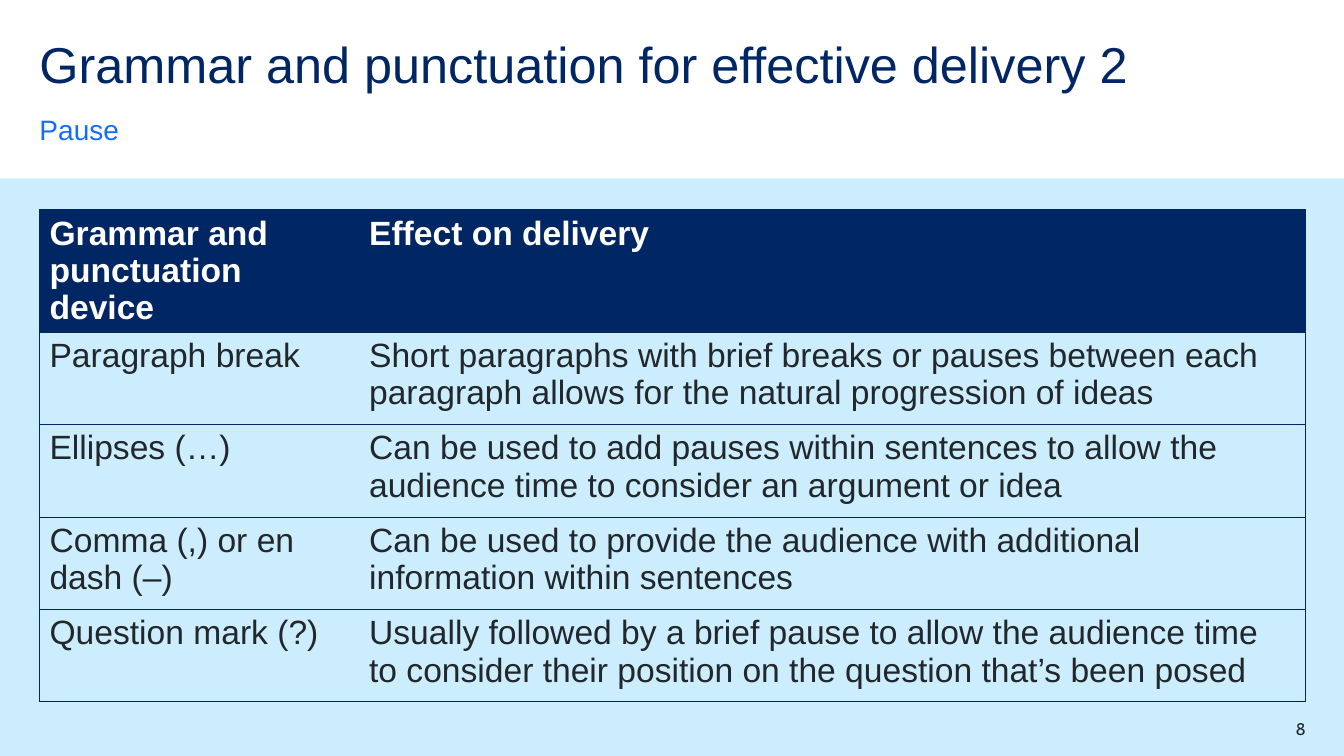
from dataclasses import dataclass

import pptx
import pptx.dml.color
import pptx.enum.shapes
import pptx.enum.text
import pptx.oxml.ns
import pptx.util
from lxml import etree

Pt = pptx.util.Pt
RGBColor = pptx.dml.color.RGBColor
PP_ALIGN = pptx.enum.text.PP_ALIGN
MSO_ANCHOR = pptx.enum.text.MSO_ANCHOR

NAVY = RGBColor(0x00, 0x26, 0x64)
BLUE = RGBColor(0x14, 0x6C, 0xFD)
PALE_BLUE = RGBColor(0xCB, 0xED, 0xFD)
CHARCOAL = RGBColor(0x22, 0x27, 0x2B)
WHITE = RGBColor(0xFF, 0xFF, 0xFF)

SLIDE_WIDTH, SLIDE_HEIGHT = 960, 540
BAND_TOP = 127.5
LEFT = 28.2
COLUMN_WIDTHS = (228.3, 676)
ROW_HEIGHT = 66
BORDER_WIDTH = 0.5


@dataclass(frozen=True)
class TextBlock:
    text: str
    box: tuple[float, float, float, float]
    size: float
    color: RGBColor
    font: str = "Arial"
    align: PP_ALIGN = PP_ALIGN.LEFT
    anchor: MSO_ANCHOR = MSO_ANCHOR.TOP
    line_spacing: float = 1.0
    space_after: float = 0


@dataclass(frozen=True)
class Device:
    name: str
    effect: str


HEADING = TextBlock("Grammar and punctuation for effective delivery 2",
                    (LEFT, 28.2, 808, 41), 36, NAVY, line_spacing=0.9)
TOPIC = TextBlock("Pause", (LEFT, 80, 793.5, 24.5), 20, BLUE,
                  anchor=MSO_ANCHOR.BOTTOM, line_spacing=1.5, space_after=12)
PAGE_NUMBER = TextBlock("8", (876.2, 513.4, 56.6, 14.4), 12, CHARCOAL,
                        font="Cabin", align=PP_ALIGN.RIGHT)

DEVICES = (
    Device("Grammar and punctuation device", "Effect on delivery"),
    Device("Paragraph break",
           "Short paragraphs with brief breaks or pauses between each "
           "paragraph allows for the natural progression of ideas"),
    Device("Ellipses (…)",
           "Can be used to add pauses within sentences to allow the "
           "audience time to consider an argument or idea"),
    Device("Comma (,) or en dash (–)",
           "Can be used to provide the audience with additional "
           "information within sentences"),
    Device("Question mark (?)",
           "Usually followed by a brief pause to allow the audience time "
           "to consider their position on the question that’s been posed"),
)


def style_font(font, name: str, size: float, color: RGBColor,
               bold: bool = False) -> None:
    font.name, font.size, font.bold = name, Pt(size), bold
    font.color.rgb = color


def write_block(shape, block: TextBlock) -> None:
    shape.left, shape.top, shape.width, shape.height = map(Pt, block.box)
    frame = shape.text_frame
    frame.text = block.text
    frame.word_wrap = True
    frame.auto_size = pptx.enum.text.MSO_AUTO_SIZE.NONE
    frame.vertical_anchor = block.anchor
    frame.margin_left = frame.margin_right = 0
    frame.margin_top = frame.margin_bottom = 0
    paragraph = frame.paragraphs[0]
    paragraph.alignment = block.align
    paragraph.line_spacing = block.line_spacing
    paragraph.space_before = Pt(0)
    paragraph.space_after = Pt(block.space_after)
    style_font(paragraph.runs[0].font, block.font, block.size, block.color)


def remove_bullet(paragraph) -> None:
    properties = paragraph._p.get_or_add_pPr()
    properties.set("marL", "0")
    properties.set("indent", "0")
    etree.SubElement(properties, pptx.oxml.ns.qn("a:buNone"))


def set_borders(cell, visible_sides: str) -> None:
    """Draw the named sides (L, R, T, B) in navy and hide the others."""
    qn = pptx.oxml.ns.qn
    properties = cell._tc.get_or_add_tcPr()
    for position, side in enumerate("LRTB"):
        line = etree.Element(qn(f"a:ln{side}"), w=str(int(Pt(BORDER_WIDTH))))
        if side in visible_sides:
            fill = etree.SubElement(line, qn("a:solidFill"))
            etree.SubElement(fill, qn("a:srgbClr"), val=str(NAVY))
        else:
            etree.SubElement(line, qn("a:noFill"))
        properties.insert(position, line)


def add_device_table(slide, devices: tuple[Device, ...]) -> None:
    table = slide.shapes.add_table(
        len(devices), len(COLUMN_WIDTHS), Pt(LEFT), Pt(149.7),
        Pt(sum(COLUMN_WIDTHS)), Pt(ROW_HEIGHT * len(devices))).table
    table.horz_banding = False
    for column, width in zip(table.columns, COLUMN_WIDTHS):
        column.width = Pt(width)
    for row_index, device in enumerate(devices):
        is_header = row_index == 0
        row = table.rows[row_index]
        row.height = Pt(ROW_HEIGHT)
        for cell, text, outer_side in zip(
                row.cells, (device.name, device.effect), "LR"):
            cell.text = text
            cell.fill.solid()
            cell.fill.fore_color.rgb = NAVY if is_header else PALE_BLUE
            style_font(cell.text_frame.paragraphs[0].runs[0].font, "Arial", 24,
                       WHITE if is_header else CHARCOAL, is_header)
            set_borders(cell, "TB" + outer_side)


def main() -> None:
    presentation = pptx.Presentation()
    presentation.slide_width = Pt(SLIDE_WIDTH)
    presentation.slide_height = Pt(SLIDE_HEIGHT)
    slide = presentation.slides.add_slide(presentation.slide_layouts[1])

    # Title and topic
    write_block(slide.shapes.title, HEADING)
    topic = slide.placeholders[1]
    write_block(topic, TOPIC)
    remove_bullet(topic.text_frame.paragraphs[0])

    # Pale band behind the table
    band = slide.shapes.add_shape(
        pptx.enum.shapes.MSO_SHAPE.RECTANGLE, 0, Pt(BAND_TOP),
        Pt(SLIDE_WIDTH), Pt(SLIDE_HEIGHT - BAND_TOP))
    band.shadow.inherit = False
    band.fill.solid()
    band.fill.fore_color.rgb = PALE_BLUE
    band.line.fill.background()

    # Devices and their effects
    add_device_table(slide, DEVICES)

    # Page number
    page_number = slide.shapes.add_textbox(*map(Pt, PAGE_NUMBER.box))
    write_block(page_number, PAGE_NUMBER)

    presentation.save("out.pptx")


if __name__ == "__main__":
    main()
